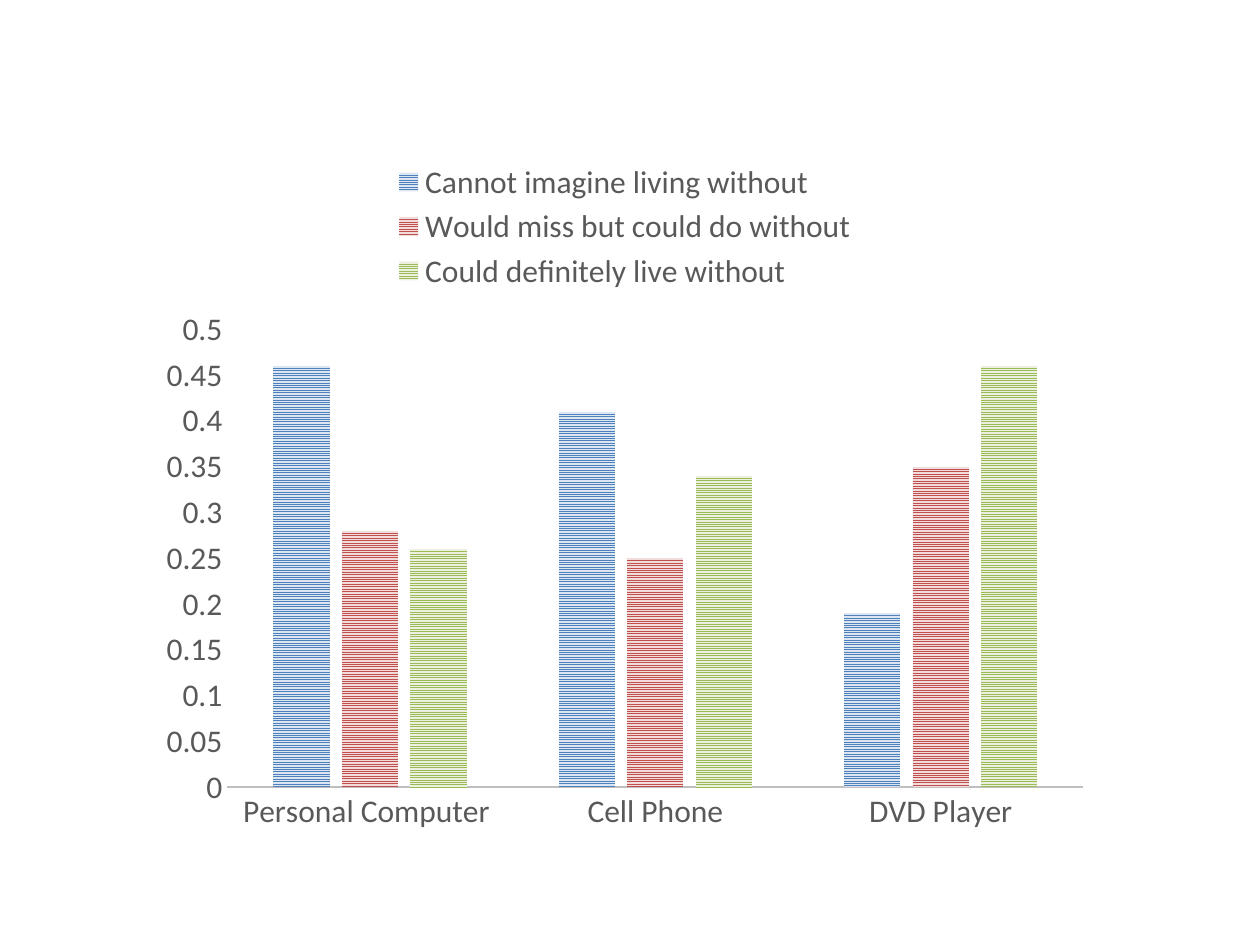
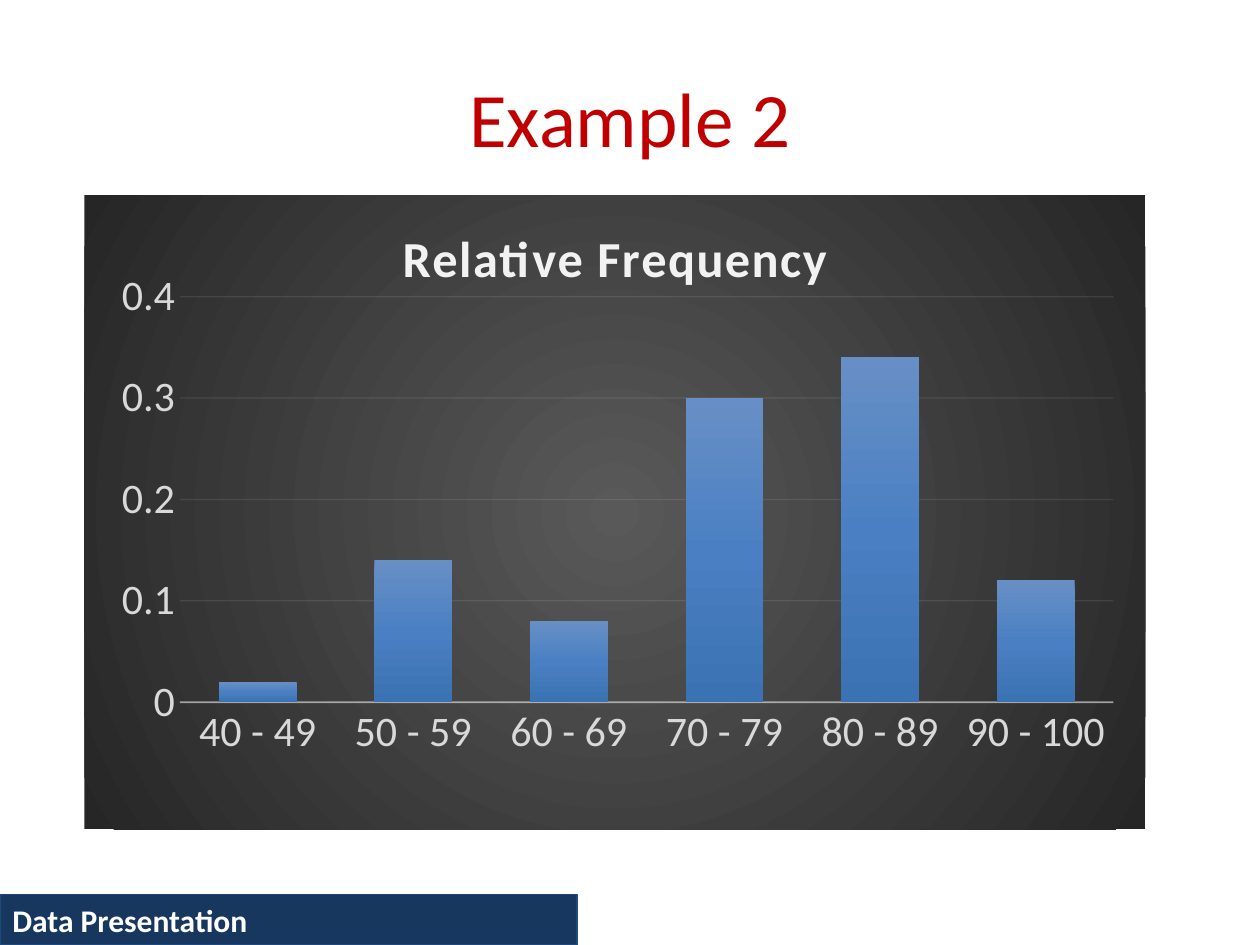
from lxml import etree
from pptx import Presentation
from pptx import util as u
from pptx.chart.data import CategoryChartData
from pptx.dml.color import RGBColor
from pptx.enum import chart as ch, dml, shapes, text
from pptx.oxml import parse_xml
from pptx.oxml.ns import qn

FONT = "Calibri"
RED = RGBColor(0xC0, 0x00, 0x00)
NAVY = RGBColor(0x17, 0x37, 0x5E)
NAVY_EDGE = RGBColor(0x1F, 0x49, 0x7D)
WHITE = RGBColor(0xFF, 0xFF, 0xFF)
PALE = RGBColor(0xF2, 0xF2, 0xF2)
LIGHT = RGBColor(0xD9, 0xD9, 0xD9)
SILVER = RGBColor(0xBF, 0xBF, 0xBF)
GRAY = RGBColor(0x59, 0x59, 0x59)
CHARCOAL = RGBColor(0x26, 0x26, 0x26)
BAR_BLUES = [RGBColor(0x68, 0x8F, 0xC5), RGBColor(0x4A, 0x80, 0xC3),
             RGBColor(0x3B, 0x72, 0xB3)]
STRIPES = [(RGBColor(0x4F, 0x81, 0xBD), RGBColor(0xDC, 0xE6, 0xF2)),
           (RGBColor(0xC0, 0x50, 0x4D), RGBColor(0xF2, 0xDC, 0xDB)),
           (RGBColor(0x9B, 0xBB, 0x59), RGBColor(0xEB, 0xF1, 0xDE))]
NS = ('xmlns:a="http://schemas.openxmlformats.org/drawingml/2006/main" '
      'xmlns:c="http://schemas.openxmlformats.org/drawingml/2006/chart"')
LINEAR = '<a:lin ang="5400000" scaled="0"/>'
RADIAL = ('<a:path path="circle"><a:fillToRect l="50000" t="50000" '
          'r="50000" b="50000"/></a:path>')


def gradient(colors, direction):
    """Return a gradient fill with evenly spaced stops."""
    step = 100000 // (len(colors) - 1)
    stops = "".join(f'<a:gs pos="{i * step}"><a:srgbClr val="{c}"/></a:gs>'
                    for i, c in enumerate(colors))
    return parse_xml(f'<a:gradFill {NS} rotWithShape="1">'
                     f'<a:gsLst>{stops}</a:gsLst>{direction}</a:gradFill>')


class Deck:
    """Hold the shared style and the current slide."""

    def __init__(self):
        self.prs = Presentation()
        self.prs.slide_width = u.Inches(10)
        self.prs.slide_height = u.Inches(7.5)
        self.s = None

    def slide(self, layout):
        self.s = self.prs.slides.add_slide(self.prs.slide_layouts[layout])
        for ph in list(self.s.placeholders):
            if ph.placeholder_format.idx >= 10:
                ph.element.getparent().remove(ph.element)

    def font(self, font, size, color, bold=None):
        font.name, font.size, font.bold = FONT, u.Pt(size), bold
        font.color.rgb = color

    def place(self, sp, box):
        sp.left, sp.top, sp.width, sp.height = map(u.Inches, box)

    def title(self, words):
        sp = self.s.shapes.title
        self.place(sp, (0.5, 0.3, 9, 1.25))
        tf = sp.text_frame
        tf.text = words
        tf.vertical_anchor = text.MSO_ANCHOR.MIDDLE
        p = tf.paragraphs[0]
        p.alignment = text.PP_ALIGN.CENTER
        self.font(p.runs[0].font, 44, RED)

    def footer(self, words):
        box = map(u.Inches, (0, 7.1, 4.58, 0.4))
        sp = self.s.shapes.add_shape(shapes.MSO_SHAPE.RECTANGLE, *box)
        sp.shadow.inherit = False
        sp.fill.solid()
        sp.fill.fore_color.rgb = NAVY
        sp.line.color.rgb = NAVY_EDGE
        sp.line.width = u.Pt(0.75)
        tf = sp.text_frame
        tf.text = words
        tf.auto_size = text.MSO_AUTO_SIZE.SHAPE_TO_FIT_TEXT
        p = tf.paragraphs[0]
        p.alignment = text.PP_ALIGN.LEFT
        self.font(p.runs[0].font, 18, WHITE, True)

    def line(self, line, color, width, opacity=100):
        line.color.rgb = color
        line.width = u.Pt(width)
        if opacity < 100:
            clr = line._get_or_add_ln().find(".//" + qn("a:srgbClr"))
            etree.SubElement(clr, qn("a:alpha")).set("val", str(opacity * 1000))

    def columns(self, box, cats, series, size, color, gap, overlap):
        data = CategoryChartData()
        data.categories = cats
        for name, vals in series.items():
            data.add_series(name, vals)
        chart = self.s.shapes.add_chart(ch.XL_CHART_TYPE.COLUMN_CLUSTERED,
                                        *map(u.Inches, box), data).chart
        self.font(chart.font, size, color)
        chart.has_title = chart.has_legend = False
        plot = chart.plots[0]
        plot.gap_width, plot.overlap = gap, overlap
        plot.vary_by_categories = False
        for axis in (chart.category_axis, chart.value_axis):
            axis.major_tick_mark = axis.minor_tick_mark = ch.XL_TICK_MARK.NONE
            axis.has_major_gridlines = False
            self.font(axis.tick_labels.font, size, color)
        chart.value_axis.format.line.fill.background()
        return chart

    def legend(self, chart, size, color):
        chart.has_legend = True
        chart.legend.position = ch.XL_LEGEND_POSITION.TOP
        chart.legend.include_in_layout = False
        self.font(chart.legend.font, size, color)

    def stripe(self, chart, pairs):
        for ser, (fore, back) in zip(chart.plots[0].series, pairs):
            fill = ser.format.fill
            fill.patterned()
            fill.pattern = dml.MSO_PATTERN.NARROW_HORIZONTAL
            fill.fore_color.rgb, fill.back_color.rgb = fore, back

    def chart_title(self, chart, words, size, color):
        chart.has_title = True
        tf = chart.chart_title.text_frame
        tf.text = words
        r = tf.paragraphs[0].runs[0]
        self.font(r.font, size, color, True)
        r.font._element.set("spc", "100")
        chart.chart_title.include_in_layout = False

    def backdrop(self, chart, colors):
        sppr = parse_xml(f'<c:spPr {NS}><a:ln><a:noFill/></a:ln></c:spPr>')
        sppr.insert(0, gradient(colors, RADIAL))
        chart._chartSpace.find(qn("c:chart")).addnext(sppr)

    def plot_area(self, chart, **box):
        area = chart._chartSpace.find(".//" + qn("c:plotArea"))
        for old in area.findall(qn("c:layout")):
            area.remove(old)
        modes = '<c:xMode val="edge"/><c:yMode val="edge"/>'
        sides = "".join(f'<c:{k} val="{v}"/>' for k, v in box.items())
        area.insert(0, parse_xml(
            f'<c:layout {NS}><c:manualLayout><c:layoutTarget val="inner"/>'
            f'{modes}{sides}</c:manualLayout></c:layout>'))


def technology(d):
    """Build the slide on living without devices."""
    d.slide(6)
    chart = d.columns((1.17, 1.17, 7.58, 5.53),
                      ["Personal Computer ", "Cell Phone", "DVD Player"],
                      {"Cannot imagine living without": (0.46, 0.41, 0.19),
                       "Would miss but could do without": (0.28, 0.25, 0.35),
                       "Could definitely live without": (0.26, 0.34, 0.46)},
                      18, GRAY, 164, -22)
    d.line(chart.category_axis.format.line, SILVER, 1.5)
    d.legend(chart, 18, GRAY)
    d.stripe(chart, STRIPES)


def frequency(d):
    """Build the relative frequency slide."""
    d.slide(5)
    d.title("Example 2")
    d.footer("Data Presentation")
    cats = [f"{n} - {n + 9}" for n in range(40, 90, 10)] + ["90 - 100"]
    name = "Relative Frequency"
    chart = d.columns((0.67, 1.55, 8.42, 5.03), cats,
                      {name: (0.02, 0.14, 0.08, 0.3, 0.34, 0.12)},
                      24, LIGHT, 100, -24)
    d.chart_title(chart, name, 28.8, PALE)
    d.backdrop(chart, [GRAY, CHARCOAL])
    d.plot_area(chart, x=0.09, y=0.16, w=0.88, h=0.64)
    d.line(chart.category_axis.format.line, PALE, 1, 54)
    axis = chart.value_axis
    axis.major_unit = 0.1
    axis.has_major_gridlines = True
    d.line(axis.major_gridlines.format.line, PALE, 0.75, 10)
    sppr = chart.plots[0].series[0]._element.get_or_add_spPr()
    sppr.insert(0, gradient(BAR_BLUES, LINEAR))


def main():
    """Build and save the deck."""
    d = Deck()
    technology(d)
    frequency(d)
    d.prs.save("out.pptx")


if __name__ == "__main__":
    main()
